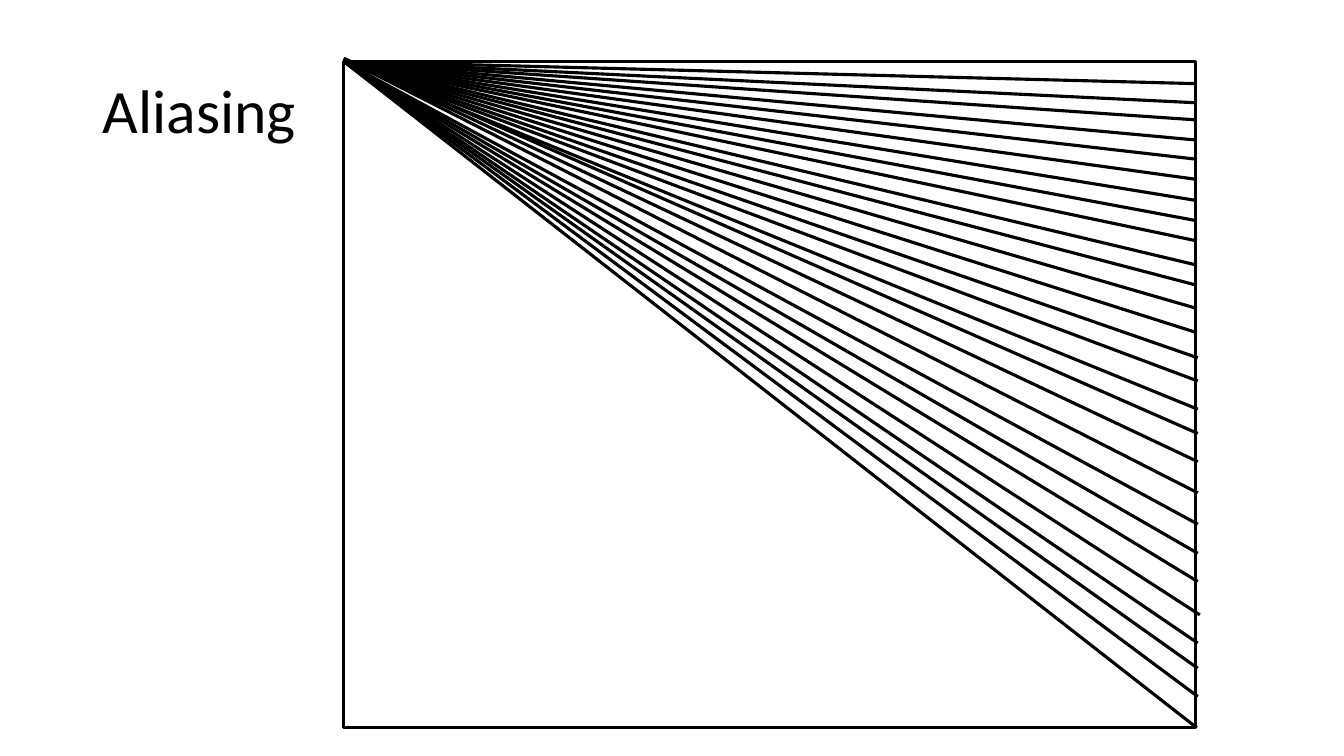
"""Build the Aliasing slide: a frame with a fan of lines from its top left corner."""
from dataclasses import dataclass

from pptx import Presentation
from pptx.dml.color import RGBColor
from pptx.enum.shapes import MSO_CONNECTOR, MSO_SHAPE
from pptx.enum.text import MSO_ANCHOR, MSO_AUTO_SIZE, PP_ALIGN
from pptx.oxml.ns import qn
from pptx.util import Inches, Pt
from lxml.etree import SubElement


@dataclass(frozen=True)
class Theme:
    ink: RGBColor = RGBColor(0, 0, 0)
    paper: RGBColor = RGBColor(255, 255, 255)
    font: str = "Calibri"
    title: Pt = Pt(44)
    stroke: Pt = Pt(2.25)


theme = Theme()
LEFT, TOP, WIDTH, HEIGHT = 3.41, 0.61, 8.45, 6.61
RAISED_TOP = 0.58
RAY_ENDS = [
    0.83, 1.02, 1.19, 1.39, 1.58, 1.78, 1.99, 2.19, 2.39,
    2.63, 2.83, 3.06, 3.3, 3.55, 3.78, 4.06, 4.3, 4.58,
    4.89, 5.2, 5.49, 5.77, 6.1, 6.38, 6.63, 6.91, 7.22,
]
RAISED_ENDS = {4.3, 4.58, 4.89}
RIGHT_ENDS = {3.3: 11.87, 6.1: 11.9, 7.22: 11.87}

prs = Presentation()
prs.slide_width, prs.slide_height = Inches(13.33), Inches(7.5)
s = prs.slides.add_slide(prs.slide_layouts[5])
s.background.fill.solid()
s.background.fill.fore_color.rgb = theme.paper

title = s.shapes.title
title.left, title.top = Inches(0.92), Inches(0.4)
title.width, title.height = Inches(11.5), Inches(1.45)
tf = title.text_frame
tf.text = "Aliasing"
tf.auto_size = MSO_AUTO_SIZE.NONE
tf.vertical_anchor = MSO_ANCHOR.MIDDLE
p = tf.paragraphs[0]
p.alignment = PP_ALIGN.LEFT
p.line_spacing = 0.9
r = p.runs[0]
r.font.name, r.font.size = theme.font, theme.title
r.font.color.rgb = theme.ink

fan = s.shapes.add_group_shape()
frame = fan.shapes.add_shape(
    MSO_SHAPE.RECTANGLE, Inches(LEFT), Inches(TOP), Inches(WIDTH), Inches(HEIGHT)
)
frame.shadow.inherit = False
frame.fill.solid()
frame.fill.fore_color.rgb = theme.paper
frame.line.color.rgb = theme.ink
frame.line.width = theme.stroke

for end in RAY_ENDS:
    start = RAISED_TOP if end in RAISED_ENDS else TOP
    right = RIGHT_ENDS.get(end, 11.87 if end < 3.5 else 11.88)
    ray = fan.shapes.add_connector(
        MSO_CONNECTOR.STRAIGHT, Inches(LEFT), Inches(start), Inches(right), Inches(end)
    )
    ray.line.color.rgb = theme.ink
    ray.line.width = theme.stroke
    SubElement(ray._element.spPr, qn("a:effectLst"))

prs.save("out.pptx")
